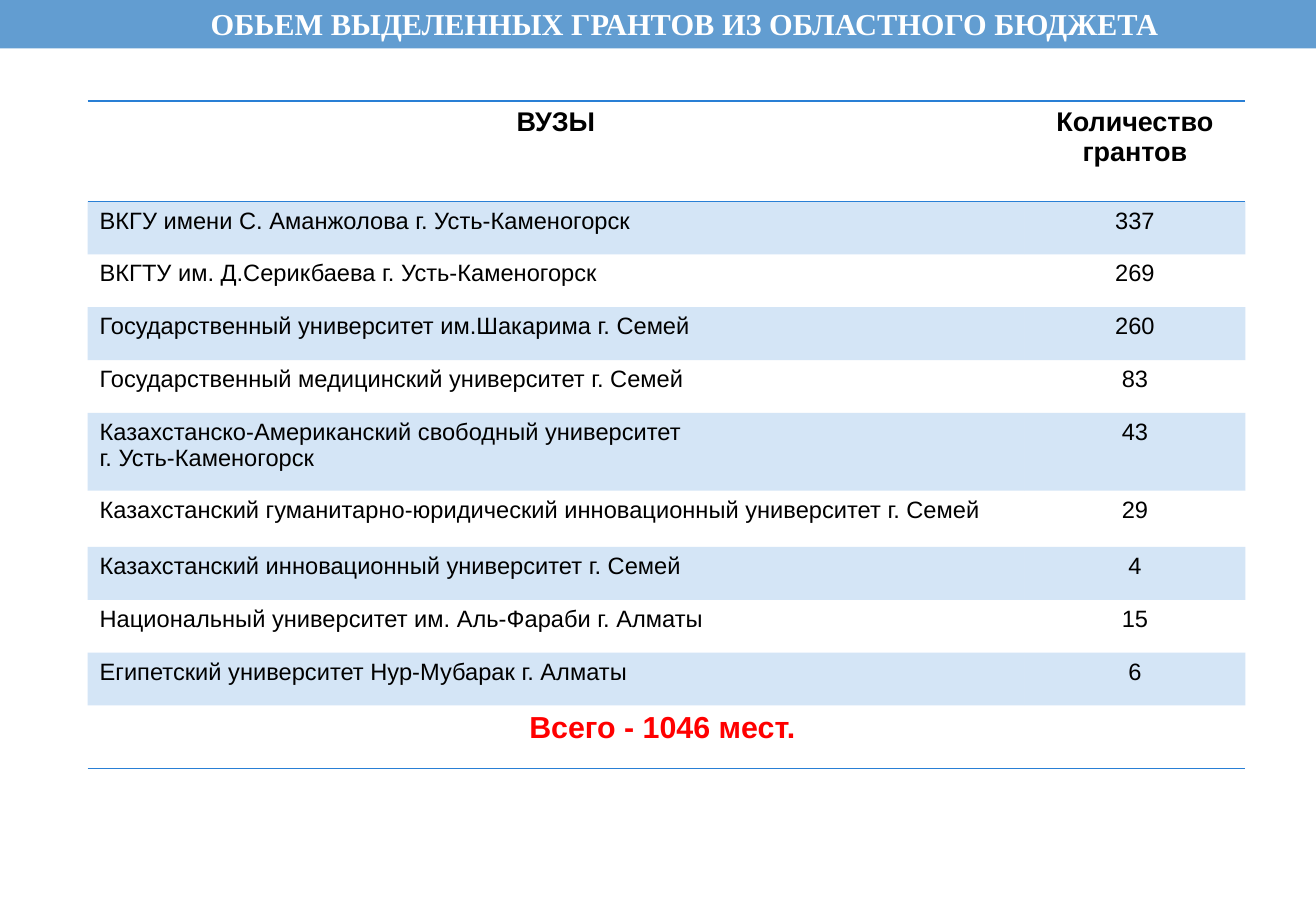
"""Build the slide on grants allocated from the regional budget."""
import pptx
import pptx.dml.color
import pptx.enum.shapes
import pptx.enum.text
import pptx.oxml
import pptx.oxml.ns
import pptx.util

PX = 914400 // 200
WHITE = pptx.dml.color.RGBColor(0xFF, 0xFF, 0xFF)
BLACK = pptx.dml.color.RGBColor(0x00, 0x00, 0x00)
RED = pptx.dml.color.RGBColor(0xFF, 0x00, 0x00)
BAR_BLUE = pptx.dml.color.RGBColor(0x62, 0x9D, 0xD1)
TABLE_BLUE = pptx.dml.color.RGBColor(0x29, 0x7F, 0xD5)
LEFT = pptx.enum.text.PP_ALIGN.LEFT
CENTER = pptx.enum.text.PP_ALIGN.CENTER
NO_STYLE = "{2D5ABB26-0587-4C30-8999-92F81FD0307C}"

UNIVERSITIES = [
    ("ВКГУ имени С. Аманжолова г. Усть-Каменогорск", 337),
    ("ВКГТУ им. Д.Серикбаева г. Усть-Каменогорск", 269),
    ("Государственный университет им.Шакарима г. Семей", 260),
    ("Государственный медицинский университет г. Семей", 83),
    ("Казахстанско-Американский свободный университет\nг. Усть-Каменогорск", 43),
    ("Казахстанский гуманитарно-юридический инновационный университет г. Семей", 29),
    ("Казахстанский инновационный университет г. Семей", 4),
    ("Национальный университет им. Аль-Фараби г. Алматы", 15),
    ("Египетский университет Нур-Мубарак г. Алматы", 6),
]
COLUMN_WIDTHS = [1542, 364]
ROW_HEIGHTS = [166, 87, 87, 87, 87, 128, 93, 87, 87, 87, 104]


def write_text(text_frame, text, size=14, font="Arial", color=BLACK, bold=False, align=LEFT):
    """Fill a text frame with formatted paragraphs, one per line of text."""
    text_frame.text = text
    for paragraph in text_frame.paragraphs:
        paragraph.alignment = align
        for run in paragraph.runs:
            run.font.size = pptx.util.Pt(size)
            run.font.name = font
            run.font.bold = bold
            run.font.color.rgb = color


def add_border(cell, tag, position):
    """Draw one blue edge of a table cell."""
    border = pptx.oxml.parse_xml(
        f'<a:{tag} {pptx.oxml.ns.nsdecls("a")} w="12700"><a:solidFill>'
        f'<a:srgbClr val="{TABLE_BLUE}"/></a:solidFill></a:{tag}>'
    )
    cell._tc.get_or_add_tcPr().insert(position, border)


presentation = pptx.Presentation()
presentation.slide_width = 2166 * PX
presentation.slide_height = 1500 * PX
slide = presentation.slides.add_slide(presentation.slide_layouts[5])

title = slide.shapes.title
title.left, title.top, title.width, title.height = 208 * PX, -2 * PX, 1838 * PX, 80 * PX
title.text_frame.word_wrap = True
title.text_frame.vertical_anchor = pptx.enum.text.MSO_ANCHOR.MIDDLE
write_text(title.text_frame, "ОБЬЕМ ВЫДЕЛЕННЫХ ГРАНТОВ ИЗ ОБЛАСТНОГО БЮДЖЕТА",
           size=18, font="Times New Roman", color=WHITE, bold=True, align=CENTER)

title_bar = slide.shapes.add_shape(
    pptx.enum.shapes.MSO_SHAPE.RECTANGLE, 0, 0, 2166 * PX, 80 * PX)
title_bar.shadow.inherit = False
title_bar.fill.solid()
title_bar.fill.fore_color.rgb = BAR_BLUE
title_bar.line.fill.background()
title.element.addprevious(title_bar.element)

table_frame = slide.shapes.add_table(
    len(ROW_HEIGHTS), len(COLUMN_WIDTHS), 144 * PX, 166 * PX,
    sum(COLUMN_WIDTHS) * PX, sum(ROW_HEIGHTS) * PX)
table = table_frame.table
table.first_row = False
table.horz_banding = False
table._tbl.tblPr.find(pptx.oxml.ns.qn("a:tableStyleId")).text = NO_STYLE
for column, width in zip(table.columns, COLUMN_WIDTHS):
    column.width = width * PX
for row, height in zip(table.rows, ROW_HEIGHTS):
    row.height = height * PX

for row_index in range(len(ROW_HEIGHTS)):
    for column_index in range(len(COLUMN_WIDTHS)):
        cell = table.cell(row_index, column_index)
        if row_index % 2:
            cell.fill.solid()
            cell.fill.fore_color.rgb = TABLE_BLUE
            color = cell._tc.tcPr.find(".//" + pptx.oxml.ns.qn("a:srgbClr"))
            color.append(pptx.oxml.parse_xml(
                f'<a:alpha {pptx.oxml.ns.nsdecls("a")} val="20000"/>'))
        else:
            cell.fill.background()

for column_index, heading in enumerate(["ВУЗЫ", "Количество грантов"]):
    cell = table.cell(0, column_index)
    write_text(cell.text_frame, heading, size=16, bold=True, align=CENTER)
    add_border(cell, "lnT", 0)
    add_border(cell, "lnB", 1)
    add_border(table.cell(len(ROW_HEIGHTS) - 1, column_index), "lnB", 0)

for row_index, (university, grants) in enumerate(UNIVERSITIES, start=1):
    write_text(table.cell(row_index, 0).text_frame, university)
    write_text(table.cell(row_index, 1).text_frame, str(grants), align=CENTER)

total = table.cell(len(ROW_HEIGHTS) - 1, 0)
total.merge(table.cell(len(ROW_HEIGHTS) - 1, 1))
write_text(total.text_frame, "Всего - 1046 мест. ", size=18, color=RED, bold=True, align=CENTER)

presentation.save("out.pptx")
